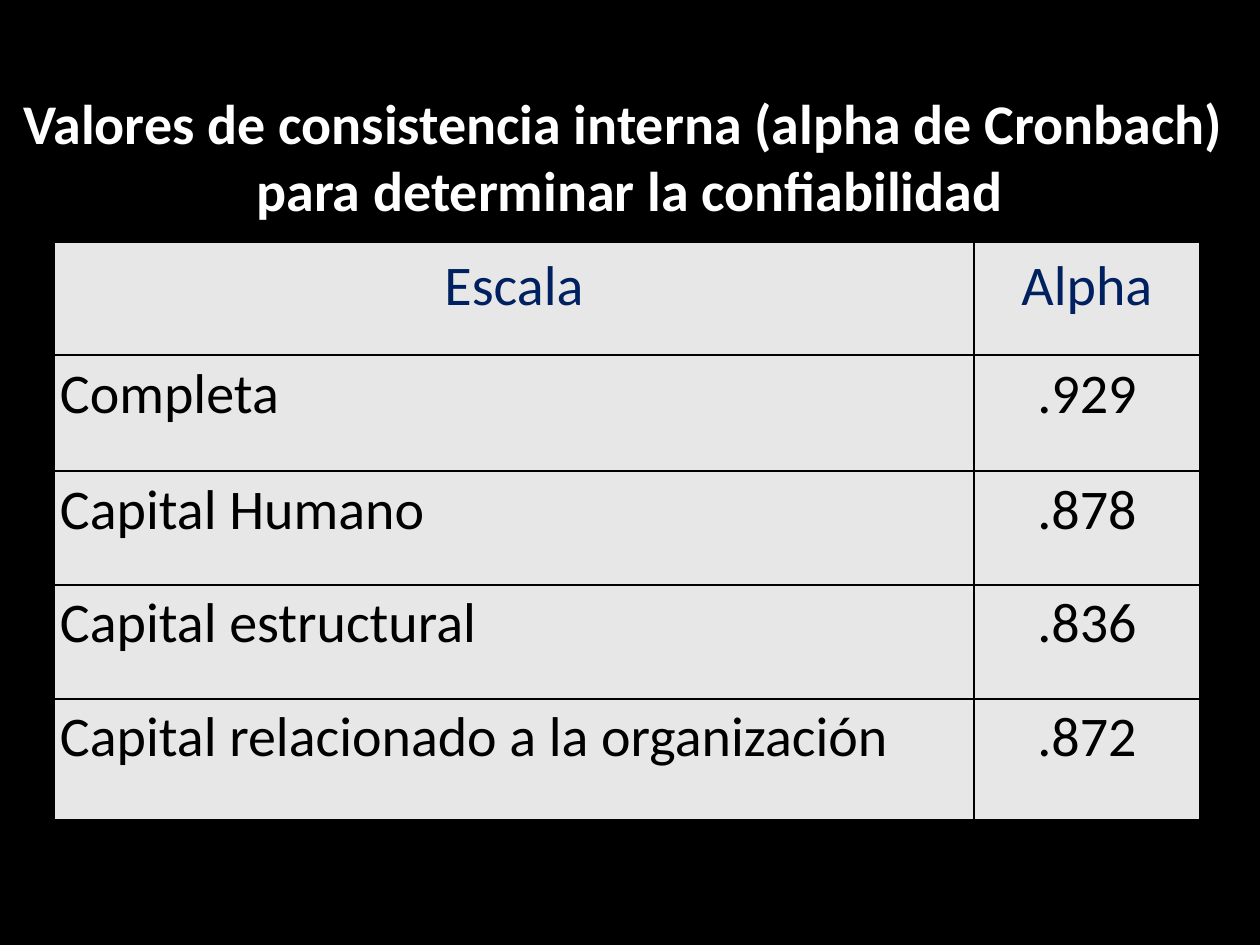
from dataclasses import dataclass

from lxml.etree import SubElement
from pptx import Presentation
from pptx.dml.color import RGBColor as Color
from pptx.enum.text import MSO_ANCHOR as Anchor, PP_ALIGN as Align
from pptx.oxml.ns import qn
from pptx.util import Emu, Pt

EMU_PER_PX = 914400 / 126


def px(length):
    return Emu(round(length * EMU_PER_PX))


def apply_format(target, values):
    for name, value in values.items():
        setattr(target, name, value)


@dataclass(frozen=True)
class Theme:
    font: str = "Calibri"
    size: int = 32
    border_width: int = 1
    background: str = "000000"
    title: str = "FFFFFF"
    heading: str = "002060"
    body: str = "000000"
    cell: str = "E7E7E7"
    border: str = "000000"


class SlideBuilder:
    """Draws styled elements on the current slide."""

    def __init__(self, page, theme):
        self.page = page
        self.theme = theme

    def background(self):
        fill = self.page.background.fill
        fill.solid()
        fill.fore_color.rgb = Color.from_string(self.theme.background)

    def add_text(self, para, text, color, bold=False, **layout):
        apply_format(para, layout)
        span = para.add_run()
        span.text = text
        apply_format(span.font, {"name": self.theme.font, "size": Pt(self.theme.size), "bold": bold})
        span.font.color.rgb = Color.from_string(color)

    def title(self, lines, left, top, width, height):
        frame = self.page.shapes.add_textbox(*map(px, (left, top, width, height))).text_frame
        apply_format(frame, {
            "word_wrap": True, "vertical_anchor": Anchor.MIDDLE,
            "margin_left": 0, "margin_right": 0, "margin_top": 0, "margin_bottom": 0,
        })
        for index, line in enumerate(lines):
            para = frame.add_paragraph() if index else frame.paragraphs[0]
            self.add_text(para, line, self.theme.title, bold=True, alignment=Align.CENTER)

    def borders(self, cell):
        properties = cell._tc.get_or_add_tcPr()
        for side in ("lnL", "lnR", "lnT", "lnB"):
            line = SubElement(properties, qn(f"a:{side}"), w=str(Pt(self.theme.border_width)))
            fill = SubElement(line, qn("a:solidFill"))
            SubElement(fill, qn("a:srgbClr"), val=self.theme.border)

    def cell(self, cell, text, is_heading, centered):
        apply_format(cell, {
            "margin_left": px(6), "margin_right": px(6), "margin_top": 0, "margin_bottom": 0,
        })
        self.borders(cell)
        cell.fill.solid()
        cell.fill.fore_color.rgb = Color.from_string(self.theme.cell)
        self.add_text(
            cell.text_frame.paragraphs[0], text,
            self.theme.heading if is_heading else self.theme.body,
            alignment=Align.CENTER if centered else Align.LEFT,
            line_spacing=1.15 if is_heading else 1.07,
        )

    def table(self, rows, left, top, widths, heights):
        size = (left, top, sum(widths), sum(heights))
        table = self.page.shapes.add_table(len(rows), len(widths), *map(px, size)).table
        apply_format(table, {"first_row": False, "horz_banding": False})
        for column, width in zip(table.columns, widths):
            column.width = px(width)
        for row, height in zip(table.rows, heights):
            row.height = px(height)
        for i, values in enumerate(rows):
            for j, text in enumerate(values):
                self.cell(table.cell(i, j), text, is_heading=i == 0, centered=i == 0 or j > 0)


def main():
    deck = Presentation()
    apply_format(deck, {"slide_width": px(1260), "slide_height": px(945)})
    builder = SlideBuilder(deck.slides.add_slide(deck.slide_layouts[6]), Theme())
    builder.background()
    builder.title(
        ["Valores de consistencia interna (alpha de Cronbach) ", "para determinar la confiabilidad"],
        0, 69, 1260, 174,
    )
    scales = [
        ("Escala", "Alpha"),
        ("Completa", ".929"),
        ("Capital Humano", ".878"),
        ("Capital estructural", ".836"),
        ("Capital relacionado a la organización", ".872"),
    ]
    builder.table(scales, 54, 242, [920, 226], [113, 116, 114, 114, 121])
    deck.save("out.pptx")


if __name__ == "__main__":
    main()
